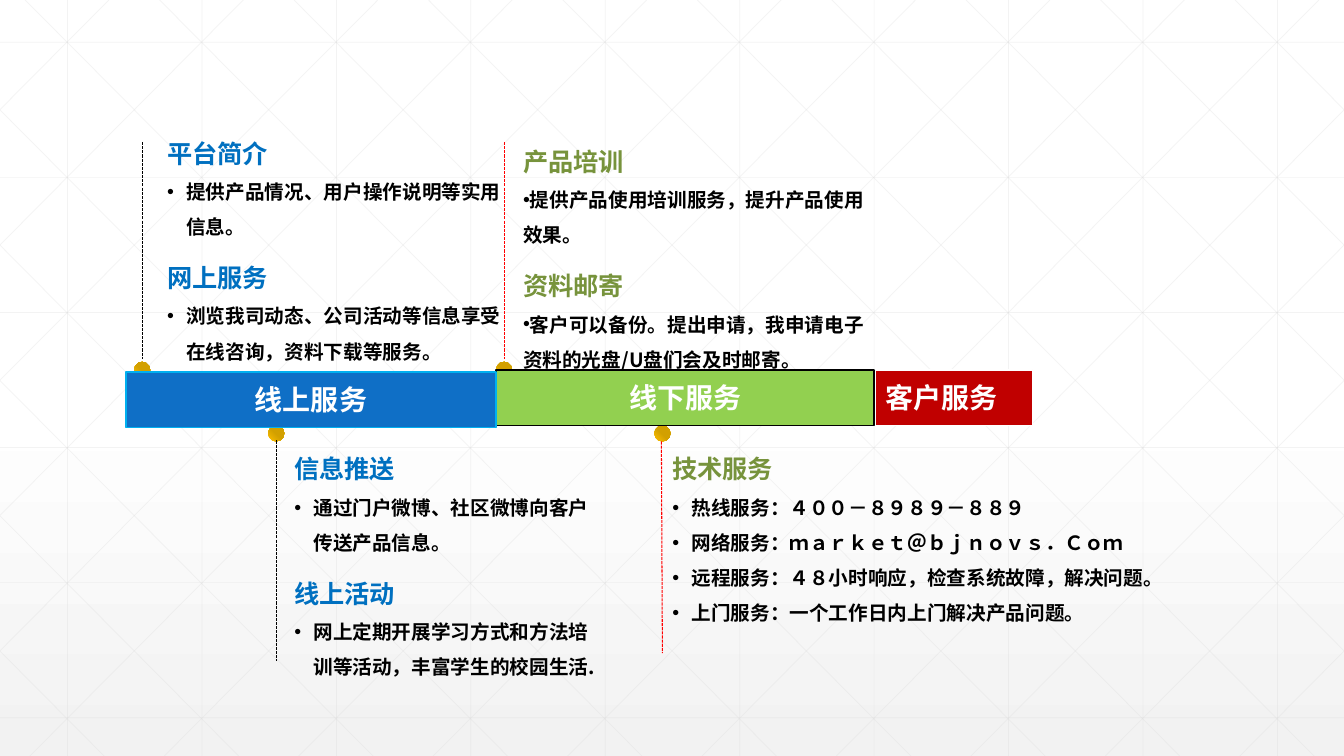
from lxml import etree
from pptx import Presentation
from pptx.dml.color import RGBColor
from pptx.enum.dml import MSO_LINE
from pptx.enum.shapes import MSO_CONNECTOR, MSO_SHAPE
from pptx.enum.text import MSO_ANCHOR, MSO_AUTO_SIZE, PP_ALIGN
from pptx.oxml.ns import qn
from pptx.util import Inches, Pt

STRAIGHT = MSO_CONNECTOR.STRAIGHT
RECTANGLE, OVAL = MSO_SHAPE.RECTANGLE, MSO_SHAPE.OVAL
DASH = MSO_LINE.SQUARE_DOT
CENTER, MIDDLE = PP_ALIGN.CENTER, MSO_ANCHOR.MIDDLE
GROW = MSO_AUTO_SIZE.SHAPE_TO_FIT_TEXT

# Content
FONT = "Noto Sans CJK SC"
WIDTH, HEIGHT = 13.33, 7.5
BLUE, GREEN, BLACK, RED, WHITE = "0070C0", "77933C", "000000", "FF0000", "FFFFFF"
GRID_COLOR = "D9D9D9"
BACKGROUND_STOPS = [(0, WHITE), (53, WHITE), (100, "F2F2F2")]
DOT_STOPS = [(0, "FFC000"), (50, "D2A000"), (100, "D2A000")]

# Bars: text, box, fill, outline, text box
BARS = [
    ("客户服务", (8.68, 3.67, 1.56, 0.55), "C00000", WHITE, (8.52, 3.67, 1.64, 0.55)),
    ("线下服务", (4.92, 3.67, 3.75, 0.55), "92D050", BLACK, None),
    ("线上服务", (1.25, 3.69, 3.67, 0.55), "0F6FC6", "00B0F0", None),
]
DOT_SIZE = 0.16
DOTS = [(1.33, 3.59), (2.66, 4.22), (4.92, 3.59), (6.49, 4.22)]

# Notes: box, title colour, bullet indent, sections, leader line, leader colour
NOTES = [
    ((6.57, 4.3, 5.07, 1.97), GREEN, 0.19, [
        ("技术服务", ["热线服务：４００－８９８９－８８９",
                  "网络服务：ｍａｒｋｅｔ＠ｂｊｎｏｖｓ．Ｃｏｍ",
                  "远程服务：４８小时响应，检查系统故障，解决问题。",
                  "上门服务：一个工作日内上门解决产品问题。"]),
    ], (6.56, 4.38, 6.57, 6.48), RED),
    ((2.82, 4.3, 3.28, 2.51), BLUE, 0.19, [
        ("信息推送", ["通过门户微博、社区微博向客户传送产品信息。"]),
        ("线上活动", ["网上定期开展学习方式和方法培训等活动，丰富学生的校园生活."]),
    ], (2.74, 4.37, 2.74, 6.56), BLACK),
    ((5.09, 1.25, 3.67, 2.51), GREEN, 0, [
        ("产品培训", ["提供产品使用培训服务，提升产品使用效果。"]),
        ("资料邮寄", ["客户可以备份。提出申请，我申请电子资料的光盘/U盘们会及时邮寄。"]),
    ], (5, 1.41, 5, 3.56), RED),
    ((1.56, 1.17, 3.52, 2.51), BLUE, 0.19, [
        ("平台简介", ["提供产品情况、用户操作说明等实用信息。"]),
        ("网上服务", ["浏览我司动态、公司活动等信息享受在线咨询，资料下载等服务。"]),
    ], (1.41, 1.41, 1.41, 3.56), BLACK),
]


def color(value):
    return RGBColor.from_string(value)


def set_gradient(fill, parent, stops, angle):
    fill.gradient()
    fill.gradient_angle = angle
    stop_list = next(parent.iter(qn("a:gsLst")))
    for stop in list(stop_list):
        stop_list.remove(stop)
    for position, value in stops:
        stop = etree.SubElement(stop_list, qn("a:gs"), pos=str(position * 1000))
        etree.SubElement(stop, qn("a:srgbClr"), val=value)


def add_line(slide, ends, line_color, width, dash=None, opacity=None):
    line = slide.shapes.add_connector(STRAIGHT, *[Inches(value) for value in ends])
    line.line.color.rgb = color(line_color)
    line.line.width = Pt(width)
    if dash:
        line.line.dash_style = dash
    properties = line._element.spPr
    if opacity:
        tone = next(properties.iter(qn("a:srgbClr")))
        etree.SubElement(tone, qn("a:alpha"), val=str(opacity * 1000))
    etree.SubElement(properties, qn("a:effectLst"))


def add_shape(slide, kind, box):
    shape = slide.shapes.add_shape(kind, *[Inches(value) for value in box])
    shape.shadow.inherit = False
    return shape


def add_text_box(slide, box):
    return slide.shapes.add_textbox(*[Inches(value) for value in box])


def write(paragraph, text, size, text_color):
    run = paragraph.add_run()
    run.text = text
    font_format = {"name": FONT, "size": Pt(size), "bold": True}
    for name, value in font_format.items():
        setattr(run.font, name, value)
    run.font.color.rgb = color(text_color)
    etree.SubElement(run._r.get_or_add_rPr(), qn("a:ea"), typeface=FONT)


def draw_grid(slide):
    step, slope = 4 / 3, 7.5 / 7.45
    lines = [(x, 0, x, HEIGHT) for x in [0.67 + step * i for i in range(10)]]
    lines += [(0, y, WIDTH, y) for y in [0.42 + 1.34 * i for i in range(6)]]
    # Diagonals clipped to the slide, each with its mirror image
    for i in range(-5, 10):
        start = 0.25 + step * i
        left, right = max(start, 0), min(start + HEIGHT / slope, WIDTH)
        top, bottom = (left - start) * slope, (right - start) * slope
        lines.append((left, top, right, bottom))
        lines.append((WIDTH - left, top, WIDTH - right, bottom))
    for ends in lines:
        add_line(slide, ends, GRID_COLOR, 0.5, opacity=30)


def draw_bar(slide, text, box, fill, outline, text_box):
    bar = add_shape(slide, RECTANGLE, box)
    bar.fill.solid()
    bar.fill.fore_color.rgb = color(fill)
    bar.line.color.rgb = color(outline)
    bar.line.width = Pt(1)
    holder = add_text_box(slide, text_box) if text_box else bar
    frame = holder.text_frame
    frame.word_wrap = True
    frame.vertical_anchor = MIDDLE
    frame.paragraphs[0].alignment = CENTER
    write(frame.paragraphs[0], text, 20, WHITE)


def draw_dot(slide, left, top):
    dot = add_shape(slide, OVAL, (left, top, DOT_SIZE, DOT_SIZE))
    set_gradient(dot.fill, dot._element.spPr, DOT_STOPS, 45)
    dot.line.fill.background()


def draw_note(slide, box, title_color, indent, sections):
    frame = add_text_box(slide, box).text_frame
    frame.word_wrap = True
    frame.auto_size = GROW
    rows = []
    for title, bullets in sections:
        rows.append((title, 18, title_color, False))
        rows += [(bullet, 14, BLACK, True) for bullet in bullets]
    for i, (text, size, text_color, bulleted) in enumerate(rows):
        paragraph = frame.add_paragraph() if i else frame.paragraphs[0]
        paragraph.line_spacing = 1.5
        if i and not bulleted:
            paragraph.space_before = Pt(6)
        properties = paragraph._p.get_or_add_pPr()
        properties.set("marL", str(Inches(indent)))
        properties.set("indent", str(-Inches(indent)))
        if bulleted:
            etree.SubElement(properties, qn("a:buFont"), typeface="Arial")
            etree.SubElement(properties, qn("a:buChar"), char="•")
        write(paragraph, text, size, text_color)


def main():
    presentation = Presentation()
    presentation.slide_width = Inches(WIDTH)
    presentation.slide_height = Inches(HEIGHT)
    slide = presentation.slides.add_slide(presentation.slide_layouts[6])

    # Background and grid
    set_gradient(slide.background.fill, slide._element, BACKGROUND_STOPS, 270)
    draw_grid(slide)

    # Service bars with dots on the edges; the first bar lies under the dots
    draw_bar(slide, *BARS[0])
    for left, top in DOTS:
        draw_dot(slide, left, top)
    for bar in BARS[1:]:
        draw_bar(slide, *bar)

    # Notes and their leader lines
    for box, title_color, indent, sections, leader, leader_color in NOTES:
        draw_note(slide, box, title_color, indent, sections)
        add_line(slide, leader, leader_color, 0.75, dash=DASH)

    presentation.save("out.pptx")


if __name__ == "__main__":
    main()
